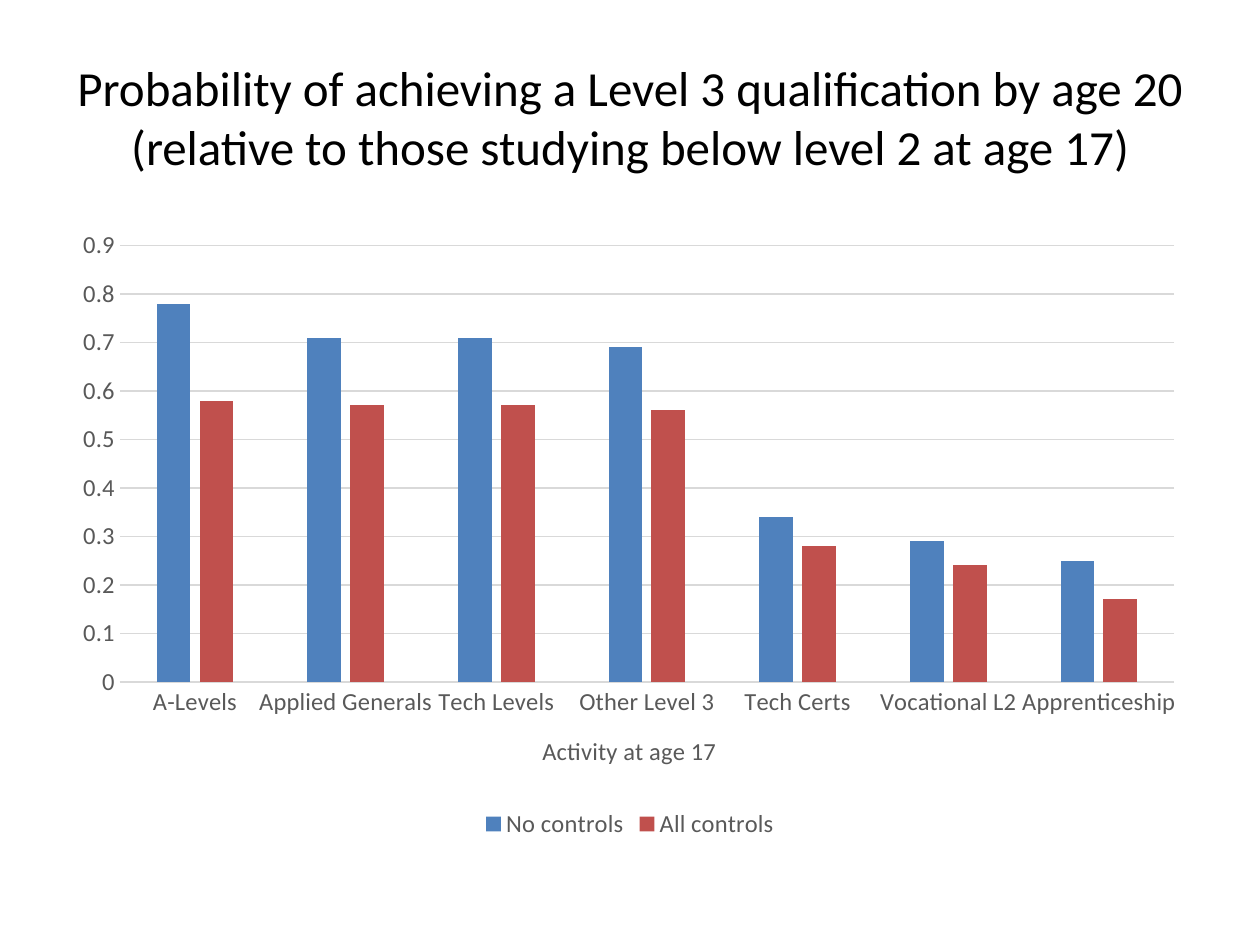
from pptx import Presentation, util as u
from pptx.chart.data import CategoryChartData
from pptx.dml.color import RGBColor
from pptx.enum import chart as ch, text as t
from pptx.oxml import parse_xml
from pptx.oxml.ns import nsdecls

TITLE = ("Probability of achieving a Level 3 qualification by age 20 "
         "(relative to those studying below level 2 at age 17)")
AXIS = "Activity at age 17"
CATS = ["A-Levels", "Applied Generals", "Tech Levels", "Other Level 3",
        "Tech Certs", "Vocational L2", "Apprenticeship"]
BLACK = RGBColor(0x00, 0x00, 0x00)
GREY = RGBColor(0x59, 0x59, 0x59)
PALE = RGBColor(0xD9, 0xD9, 0xD9)
BLUE = RGBColor(0x4F, 0x81, 0xBD)
RED = RGBColor(0xC0, 0x50, 0x4D)
SERIES = [
    ("No controls", BLUE, [0.78, 0.71, 0.71, 0.69, 0.34, 0.29, 0.25]),
    ("All controls", RED, [0.58, 0.57, 0.57, 0.56, 0.28, 0.24, 0.17]),
]
PLOT = {"x": 0.05, "y": 0.04, "w": 0.93, "h": 0.7}
FONT = "Calibri"
WIDE, HIGH, EDGE = 10, 7.5, 0.5


def style(font, size=14, color=GREY):
    font.name, font.size, font.bold = FONT, u.Pt(size), False
    font.color.rgb = color


def write(frame, words, align=t.PP_ALIGN.CENTER, **form):
    para = frame.paragraphs[0]
    para.alignment = align
    run = para.add_run()
    run.text = words
    style(run.font, **form)


def rule(line):
    line.color.rgb = PALE
    line.width = u.Pt(0.75)


def place(chart):
    area = chart._chartSpace.chart.plotArea
    for old in area.xpath("c:layout"):
        area.remove(old)
    parts = "".join(f'<c:{key} val="{val}"/>' for key, val in PLOT.items())
    area.insert(0, parse_xml(
        f'<c:layout {nsdecls("c")}><c:manualLayout>'
        '<c:layoutTarget val="inner"/><c:xMode val="edge"/>'
        f'<c:yMode val="edge"/>{parts}</c:manualLayout></c:layout>'))


def add_title(slide):
    box = slide.shapes.add_textbox(
        u.Inches(EDGE), u.Inches(0.3), u.Inches(WIDE - 2 * EDGE), u.Inches(1.25))
    frame = box.text_frame
    frame.word_wrap = True
    frame.vertical_anchor = t.MSO_ANCHOR.MIDDLE
    write(frame, TITLE, size=28, color=BLACK)


def add_bars(slide):
    data = CategoryChartData()
    data.categories = CATS
    for name, _, vals in SERIES:
        data.add_series(name, vals)
    chart = slide.shapes.add_chart(
        ch.XL_CHART_TYPE.COLUMN_CLUSTERED, u.Inches(EDGE), u.Inches(1.75),
        u.Inches(WIDE - 2 * EDGE), u.Inches(4.95), data).chart
    style(chart.font, size=10, color=BLACK)
    chart.has_title = False
    chart.has_legend = True
    chart.legend.position = ch.XL_LEGEND_POSITION.BOTTOM
    chart.legend.include_in_layout = False
    style(chart.legend.font)

    plot = chart.plots[0]
    plot.gap_width, plot.overlap = 219, -27
    plot.vary_by_categories = False
    for bars, (_, color, _) in zip(plot.series, SERIES):
        bars.format.fill.solid()
        bars.format.fill.fore_color.rgb = color

    cat, val = chart.category_axis, chart.value_axis
    for axis in (cat, val):
        axis.major_tick_mark = axis.minor_tick_mark = ch.XL_TICK_MARK.NONE
        style(axis.tick_labels.font)
        for body in axis._element.xpath("c:txPr/a:bodyPr"):
            body.set("rot", "-60000000")
    rule(cat.format.line)
    write(cat.axis_title.text_frame, AXIS)
    val.minimum_scale, val.maximum_scale, val.major_unit = 0, 0.9, 0.1
    val.format.line.fill.background()
    val.has_major_gridlines = True
    rule(val.major_gridlines.format.line)
    place(chart)


def main():
    deck = Presentation()
    deck.slide_width, deck.slide_height = u.Inches(WIDE), u.Inches(HIGH)
    slide = deck.slides.add_slide(deck.slide_layouts[6])
    add_title(slide)
    add_bars(slide)
    deck.save("out.pptx")


if __name__ == "__main__":
    main()
